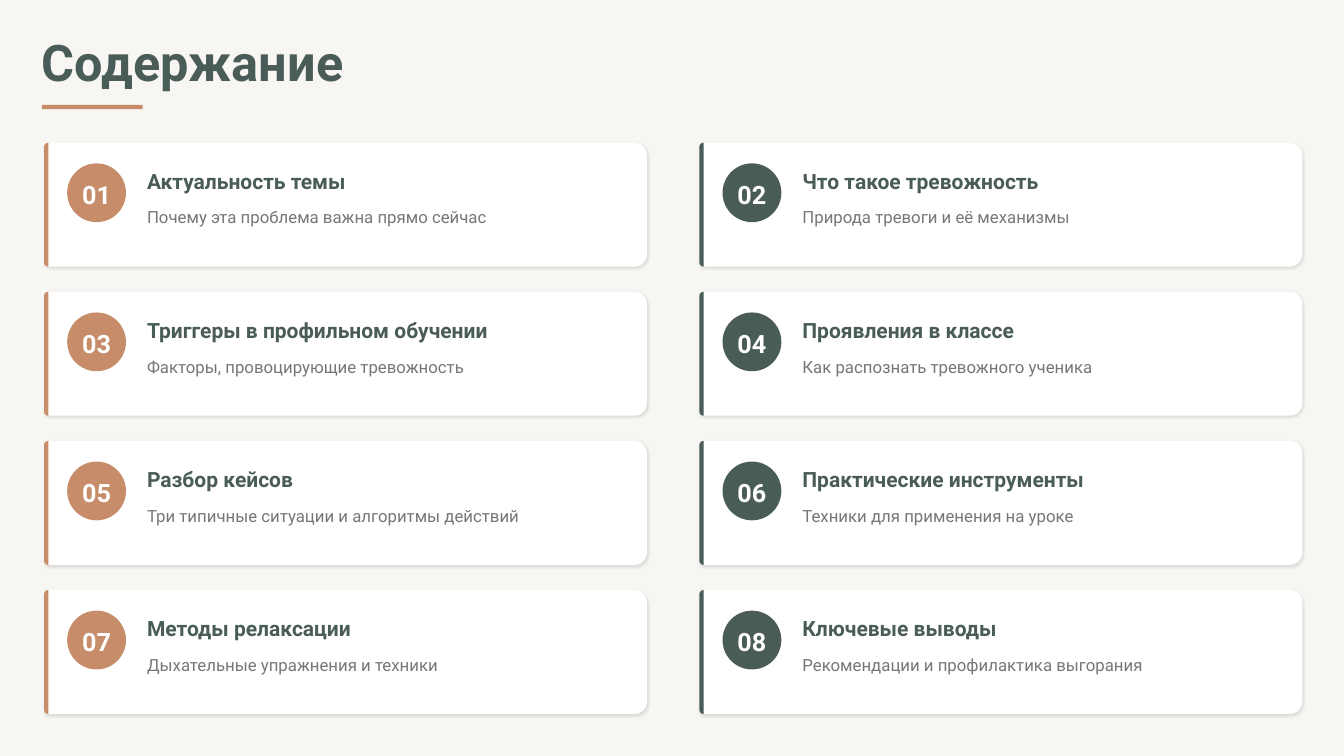
from math import cos, pi, sin

from lxml.etree import SubElement
from pptx import Presentation
from pptx.dml.color import RGBColor
from pptx.enum.shapes import MSO_SHAPE
from pptx.enum.text import MSO_ANCHOR, MSO_AUTO_SIZE, PP_ALIGN
from pptx.oxml.ns import qn
from pptx.util import Inches, Pt

CREAM = RGBColor(0xF8, 0xF6, 0xF2)
GREEN = RGBColor(0x4A, 0x5C, 0x58)
CLAY = RGBColor(0xC7, 0x8D, 0x6A)
WHITE = RGBColor(0xFF, 0xFF, 0xFF)
GRAY = RGBColor(0x3D, 0x3D, 0x3D)

TOPICS = [
    ("Актуальность темы", "Почему эта проблема важна прямо сейчас"),
    ("Что такое тревожность", "Природа тревоги и её механизмы"),
    ("Триггеры в профильном обучении", "Факторы, провоцирующие тревожность"),
    ("Проявления в классе", "Как распознать тревожного ученика"),
    ("Разбор кейсов", "Три типичные ситуации и алгоритмы действий"),
    ("Практические инструменты", "Техники для применения на уроке"),
    ("Методы релаксации", "Дыхательные упражнения и техники"),
    ("Ключевые выводы", "Рекомендации и профилактика выгорания"),
]


class Deck:
    """Draws styled elements on a slide grid of 32 columns by 18 rows."""

    FONT = "Roboto"
    FRAME = {
        "margin_left": 0, "margin_top": 0, "margin_right": 0, "margin_bottom": 0,
        "vertical_anchor": MSO_ANCHOR.MIDDLE, "word_wrap": True,
        "auto_size": MSO_AUTO_SIZE.NONE,
    }

    def __init__(self):
        """Open a wide presentation with one title-only slide."""
        self.prs = Presentation()
        self.prs.slide_width, self.prs.slide_height = Inches(13.33), Inches(7.5)
        self.unit = self.prs.slide_height / 18
        self.s = self.prs.slides.add_slide(self.prs.slide_layouts[5])
        self.s.background.fill.solid()
        self.s.background.fill.fore_color.rgb = CREAM

    def grid(self, *values):
        """Turn grid units into slide lengths."""
        return [round(v * self.unit) for v in values]

    def paint(self, sp, color):
        """Give a shape a plain fill with no line and no shadow."""
        sp.fill.solid()
        sp.fill.fore_color.rgb = color
        sp.line.fill.background()
        sp.shadow.inherit = False
        return sp

    def set_text(self, sp, text, size, color, spacing, bold=True,
                 align=PP_ALIGN.LEFT, alpha=None):
        """Set one styled paragraph in a shape."""
        tf = sp.text_frame
        for name, value in self.FRAME.items():
            setattr(tf, name, value)
        p = tf.paragraphs[0]
        p.alignment, p.line_spacing = align, spacing
        r = p.add_run()
        r.text = text
        style = {"name": self.FONT, "size": Pt(size), "bold": bold}
        for name, value in style.items():
            setattr(r.font, name, value)
        r.font.color.rgb = color
        if alpha:
            clr = p._p.find(".//" + qn("a:srgbClr"))
            SubElement(clr, qn("a:alpha"), val=str(alpha * 1000))

    def title(self, text, x, y, w, h):
        """Place and format the slide title."""
        sp = self.s.shapes.title
        sp.left, sp.top, sp.width, sp.height = self.grid(x, y, w, h)
        self.set_text(sp, text, 36, GREEN, 0.8)

    def text(self, text, x, y, w, h, **style):
        """Add a text box."""
        sp = self.s.shapes.add_textbox(*self.grid(x, y, w, h))
        self.set_text(sp, text, **style)

    def shape(self, kind, x, y, w, h, color):
        """Add a preset shape."""
        return self.paint(self.s.shapes.add_shape(kind, *self.grid(x, y, w, h)), color)

    def panel(self, x, y, w, h, left, right, color):
        """Add a rectangle with separate left and right corner radii."""
        corners = [
            (x + left, y + left, left, 2), (x + w - right, y + right, right, 3),
            (x + w - right, y + h - right, right, 0), (x + left, y + h - left, left, 1),
        ]
        points = [
            self.grid(cx + rad * cos(a), cy + rad * sin(a))
            for cx, cy, rad, turn in corners
            for a in [(turn + i / 8) * pi / 2 for i in range(9 if rad else 1)]
        ]
        ff = self.s.shapes.build_freeform(*points[0])
        ff.add_line_segments(points[1:], close=True)
        return self.paint(ff.convert_to_shape(), color)

    def soften(self, sp):
        """Give a shape a faint shadow below it."""
        effects = sp.element.spPr.find(qn("a:effectLst"))
        shadow = SubElement(effects, qn("a:outerShdw"), blurRad=str(Pt(2.2)),
                            dist=str(Pt(0.8)), dir="5400000", algn="bl", rotWithShape="0")
        clr = SubElement(shadow, qn("a:srgbClr"), val="000000")
        SubElement(clr, qn("a:alpha"), val="10000")

    def card(self, x, y, number, heading, note, color):
        """Add a contents card with its bar, badge and two lines of text."""
        self.soften(self.panel(x, y, 14.35, 2.95, 0.1, 0.3, WHITE))
        self.panel(x, y, 0.1, 2.95, 0.1, 0, color)
        badge = self.shape(MSO_SHAPE.OVAL, x + 0.55, y + 0.49, 1.4, 1.4, color)
        self.set_text(badge, number, 18, WHITE, 1.1, align=PP_ALIGN.CENTER)
        self.text(heading, x + 2.45, y + 0.49, 9.2, 0.7, size=15, color=GREEN, spacing=1.2)
        self.text(note, x + 2.45, y + 1.4, 9.2, 0.6, size=12, color=GRAY,
                  spacing=1.3, bold=False, alpha=70)


def main():
    """Build the contents slide."""
    deck = Deck()
    deck.title("Содержание", 1, 1, 30.6, 1.2)
    deck.shape(MSO_SHAPE.RECTANGLE, 1, 2.5, 2.4, 0.1, CLAY)
    for i, (heading, note) in enumerate(TOPICS):
        row, col = divmod(i, 2)
        deck.card(1.05 + 15.6 * col, 3.4 + 3.55 * row, f"{i + 1:02}",
                  heading, note, (CLAY, GREEN)[col])
    deck.prs.save("out.pptx")


if __name__ == "__main__":
    main()
